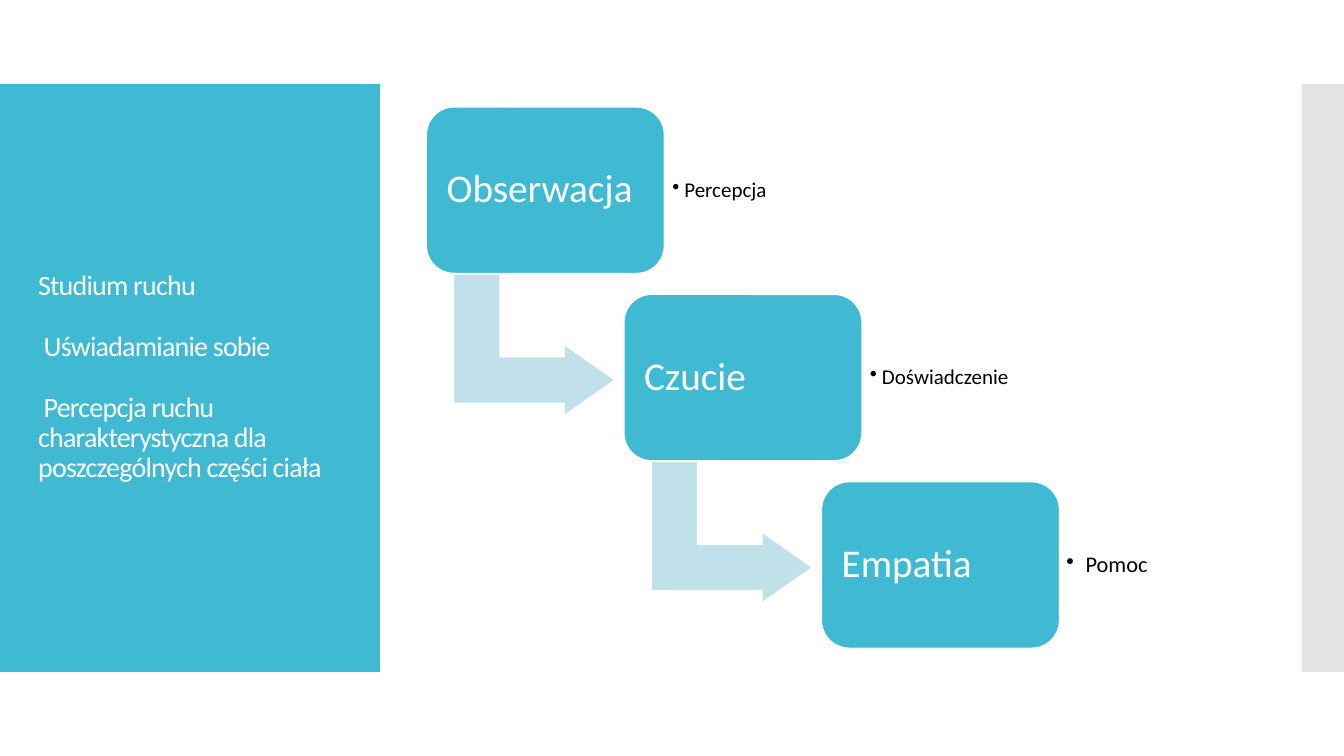
from lxml.etree import SubElement
from pptx import Presentation
from pptx.dml.color import RGBColor
from pptx.enum.shapes import MSO_SHAPE as Preset
from pptx.enum.text import MSO_ANCHOR as Anchor, PP_ALIGN as Align
from pptx.oxml.ns import qn
from pptx.util import Inches, Pt

COLORS = {
    "teal": "40BAD2",
    "arrow": "C0E0EA",
    "strip": "C8C8C8",
    "white": "FFFFFF",
    "black": "000000",
}
FONT = "Calibri"
WIDTH, HEIGHT = Inches(13.33), Inches(7.5)
COLUMNS, ROWS = 160, 90

PANEL_TOP, PANEL_ROWS = 10, 70
BOX_LEFT, BOX_TOP = 50.76, 12.74
BOX_COLUMNS, BOX_ROWS = 28.32, 19.8
STEP_COLUMNS, STEP_ROWS = 23.52, 22.31

TITLE = [
    "Studium ruchu",
    " Uświadamianie sobie",
    " Percepcja ruchu charakterystyczna dla poszczególnych części ciała",
]
STEPS = [
    ("Obserwacja", "Percepcja", 15, 0.12, 0.08),
    ("Czucie", "Doświadczenie", 15, 0.12, 0.08),
    ("Empatia", "Pomoc", 16, 0.19, 0.07),
]


def color(name):
    return RGBColor.from_string(COLORS[name])


def place(left, top, columns, rows):
    return (
        round(WIDTH * left / COLUMNS),
        round(HEIGHT * top / ROWS),
        round(WIDTH * columns / COLUMNS),
        round(HEIGHT * rows / ROWS),
    )


def add_block(slide, preset, area, fill, outline=None, opacity=None):
    shape = slide.shapes.add_shape(preset, *place(*area))
    shape.shadow.inherit = False
    shape.fill.solid()
    shape.fill.fore_color.rgb = color(fill)
    if outline:
        shape.line.color.rgb = color(outline)
        shape.line.width = Pt(0.85)
    else:
        shape.line.fill.background()
    if opacity:
        fill_color = shape.fill._xPr.find(".//" + qn("a:srgbClr"))
        SubElement(fill_color, qn("a:alpha"), val=str(opacity * 1000))
    return shape


def add_bullet(paragraph, indent):
    properties = paragraph._p.get_or_add_pPr()
    properties.set("marL", str(Inches(indent)))
    properties.set("indent", str(-Inches(indent)))
    SubElement(properties, qn("a:buChar"), char="•")


def write(shape, lines, size, ink, inset=(0.1, 0.05), gap=0, spacing=0, bullet=0):
    frame = shape.text_frame
    frame.word_wrap = True
    frame.vertical_anchor = Anchor.MIDDLE
    frame.margin_left = frame.margin_right = Inches(inset[0])
    frame.margin_top = frame.margin_bottom = Inches(inset[1])
    for index, line in enumerate(lines):
        paragraph = frame.add_paragraph() if index else frame.paragraphs[0]
        paragraph.alignment = Align.LEFT
        paragraph.line_spacing = 0.9
        if index:
            paragraph.space_before = Pt(gap)
        if bullet:
            add_bullet(paragraph, bullet)
        run = paragraph.add_run()
        run.text = line
        run.font.name = FONT
        run.font.size = Pt(size)
        run.font.color.rgb = color(ink)
        if spacing:
            run._r.get_or_add_rPr().set("spc", str(round(spacing * 100)))


def add_text(slide, area, lines, size, ink, **options):
    write(slide.shapes.add_textbox(*place(*area)), lines, size, ink, **options)


def add_arrow(slide, left, top):
    area = (left + 4.44, top + 18.7, 16.8, 19.2)
    arrow = add_block(slide, Preset.BENT_UP_ARROW, area, "arrow", "white")
    arrow.rotation = 90
    for index, value in enumerate((0.328, 0.25, 0.358)):
        arrow.adjustments[index] = value


def add_step(slide, index, label, detail, size, indent, inset):
    left = BOX_LEFT + index * STEP_COLUMNS
    top = BOX_TOP + index * STEP_ROWS
    if index < len(STEPS) - 1:
        add_arrow(slide, left, top)
    area = (left, top, BOX_COLUMNS, BOX_ROWS)
    box = add_block(slide, Preset.ROUNDED_RECTANGLE, area, "teal", "white")
    write(box, [label], 28, "white", inset=(0.12, 0.12))
    add_text(slide, (left + BOX_COLUMNS, top + 1.88, 20.64, 16.08), [detail],
             size, "black", inset=(inset, inset), bullet=indent)


def main():
    presentation = Presentation()
    presentation.slide_width, presentation.slide_height = WIDTH, HEIGHT
    slide = presentation.slides.add_slide(presentation.slide_layouts[6])
    add_block(slide, Preset.RECTANGLE, (0, PANEL_TOP, 45.24, PANEL_ROWS), "teal")
    add_block(slide, Preset.RECTANGLE, (155, PANEL_TOP, 5, PANEL_ROWS), "strip",
              opacity=50)
    add_text(slide, (3.36, 14.76, 38.64, 60.36), TITLE, 20, "white",
             gap=21.8, spacing=-0.6)
    for index, step in enumerate(STEPS):
        add_step(slide, index, *step)
    presentation.save("out.pptx")


if __name__ == "__main__":
    main()
